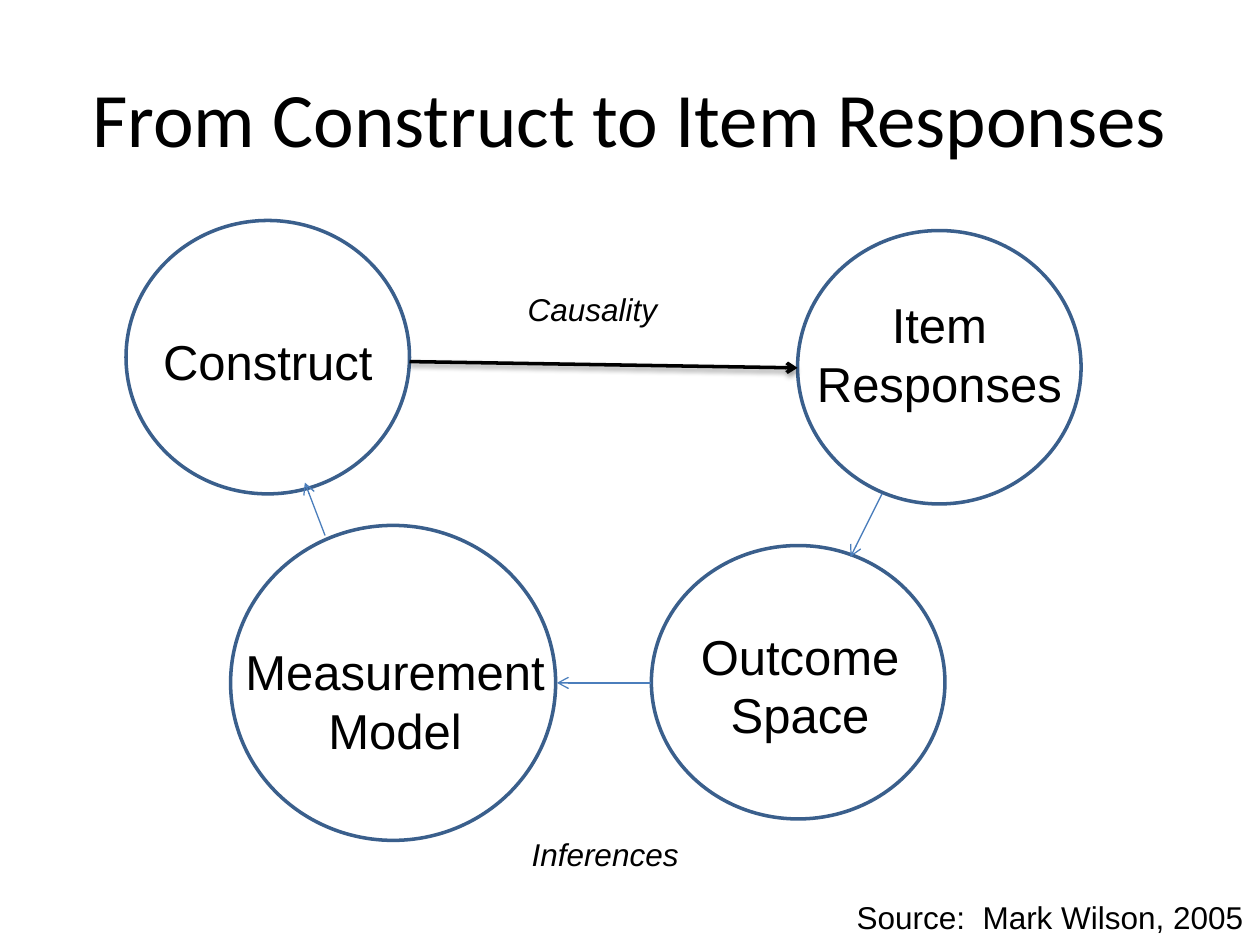
import pptx
import pptx.util
import pptx.dml.color
import pptx.enum.shapes
import pptx.enum.text
import pptx.oxml
import pptx.oxml.ns

Inches, Pt = pptx.util.Inches, pptx.util.Pt
RGBColor = pptx.dml.color.RGBColor
PP_ALIGN = pptx.enum.text.PP_ALIGN

BLACK = RGBColor(0x00, 0x00, 0x00)
OUTLINE = RGBColor(0x3A, 0x5F, 0x8C)
ARROW = RGBColor(0x4B, 0x7E, 0xBC)

SHADOW = (
    '<a:outerShdw blurRad="40000" dist="20000" dir="5400000" rotWithShape="0">'
    '<a:srgbClr val="000000"><a:alpha val="38000"/></a:srgbClr></a:outerShdw>'
)


def add_title(s, text, box):
    title = s.shapes.title
    title.left, title.top, title.width, title.height = map(Inches, box)
    tf = title.text_frame
    tf.text = text
    tf.vertical_anchor = pptx.enum.text.MSO_ANCHOR.MIDDLE
    p = tf.paragraphs[0]
    p.alignment = PP_ALIGN.CENTER
    p.font.name, p.font.size = "Calibri", Pt(44)
    p.font.color.rgb = BLACK


def add_label(s, text, box, size=18, align=PP_ALIGN.LEFT, italic=False, wrap=False):
    tf = s.shapes.add_textbox(*map(Inches, box)).text_frame
    tf.text = text
    tf.word_wrap = wrap
    tf.auto_size = pptx.enum.text.MSO_AUTO_SIZE.SHAPE_TO_FIT_TEXT
    for p in tf.paragraphs:
        p.alignment = align
        p.font.name, p.font.size = "Arial", Pt(size)
        p.font.italic = italic
        p.font.color.rgb = BLACK


def add_stage(s, text, box, label_box, wrap):
    """Outlined ellipse with its caption."""
    sp = s.shapes.add_shape(pptx.enum.shapes.MSO_SHAPE.OVAL, *map(Inches, box))
    sp.shadow.inherit = False
    sp.fill.background()
    sp.line.color.rgb = OUTLINE
    sp.line.width = Pt(2)
    add_label(s, text, label_box, 28, PP_ALIGN.CENTER, wrap=wrap)


def add_arrow(s, start, end, color=ARROW, width=0.75, effect=""):
    line = s.shapes.add_connector(
        pptx.enum.shapes.MSO_CONNECTOR.STRAIGHT, *map(Inches, start + end))
    line.line.color.rgb = color
    line.line.width = Pt(width)
    ns = pptx.oxml.ns.nsdecls("a")
    line.line._get_or_add_ln().append(
        pptx.oxml.parse_xml(f'<a:tailEnd {ns} type="arrow"/>'))
    line._element.spPr.append(
        pptx.oxml.parse_xml(f"<a:effectLst {ns}>{effect}</a:effectLst>"))


def add_cycle(s):
    # Stages: text, ellipse box, caption box, wrapping
    stages = [
        ("Construct", (1, 1.75, 2.25, 2.17), (1, 2.58, 2.25, 0.57), True),
        ("Item\nResponses", (6.33, 1.83, 2.25, 2.17), (6.33, 2.29, 2.25, 1.04), True),
        ("Outcome\nSpace", (5.17, 4.33, 2.33, 2.17), (5.45, 4.92, 1.8, 1.04), False),
        ("Measurement\nModel", (1.83, 4.17, 2.58, 2.5), (1.83, 5.04, 2.61, 1.04), False),
    ]
    for stage in stages:
        add_stage(s, *stage)

    # Causal arrow, then the inference arrows back to the construct
    add_arrow(s, (3.25, 2.87), (6.33, 2.92), BLACK, 2, SHADOW)
    add_arrow(s, (7, 3.92), (6.75, 4.42))
    add_arrow(s, (5.17, 5.42), (4.42, 5.42))
    add_arrow(s, (2.58, 4.25), (2.42, 3.83))

    add_label(s, "Causality", (4.09, 2.25, 1.24, 0.4), italic=True)
    add_label(s, "Inferences", (4.12, 6.58, 1.38, 0.4), italic=True)


def main():
    prs = pptx.Presentation()
    prs.slide_width, prs.slide_height = Inches(10), Inches(7.5)
    s = prs.slides.add_slide(prs.slide_layouts.get_by_name("Title Only"))
    add_title(s, "From Construct to Item Responses", (0.5, 0.3, 9, 1.25))
    add_cycle(s)
    # Source credit
    add_label(s, "Source:  Mark Wilson, 2005", (6.7, 7.08, 3.3, 0.4))
    prs.save("out.pptx")


if __name__ == "__main__":
    main()
